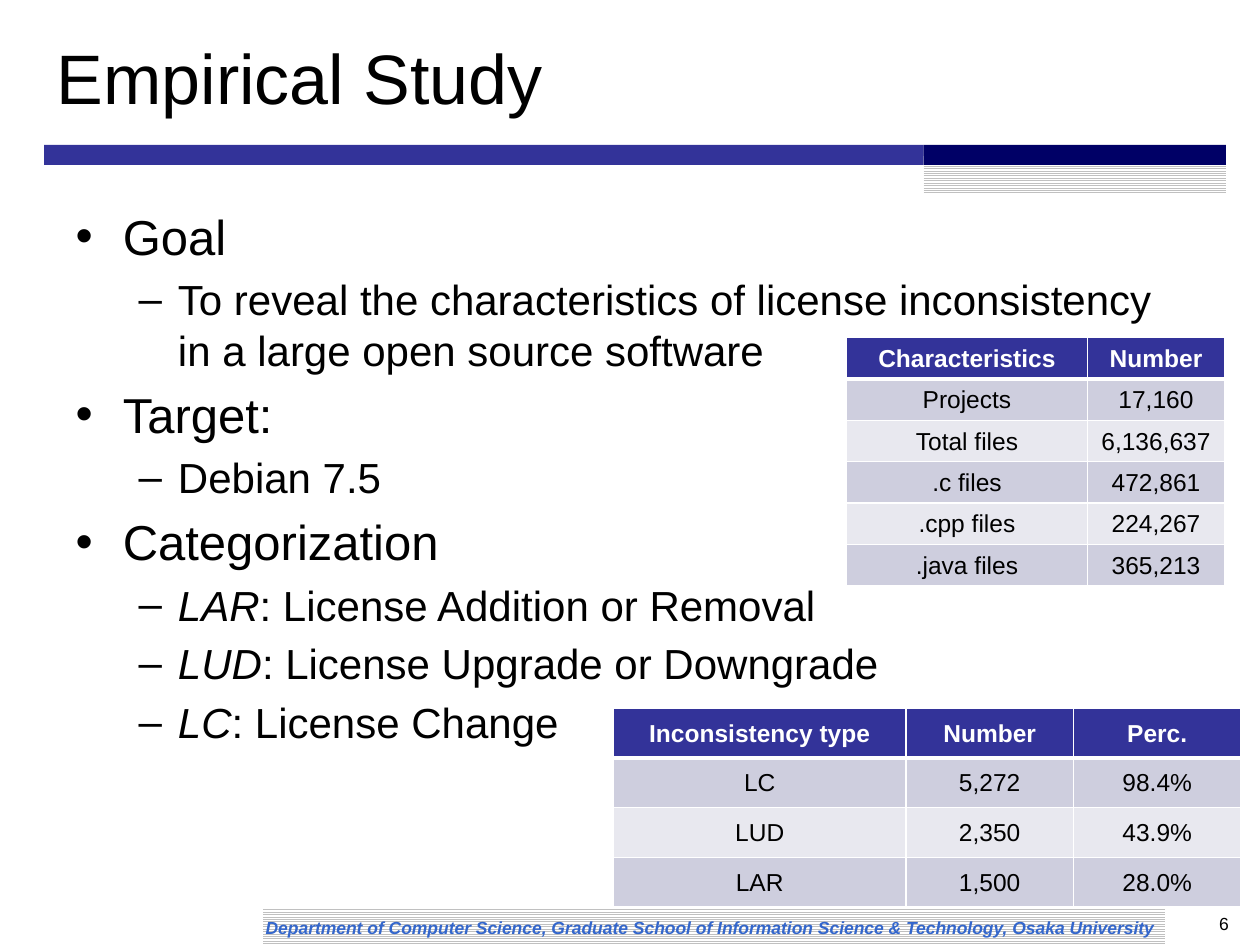
from pptx import Presentation
from pptx.util import Inches, Pt
from pptx.dml.color import RGBColor as Rgb
from pptx.enum.dml import MSO_PATTERN as Pat
from pptx.enum.shapes import MSO_SHAPE as Shape
from pptx.enum.text import MSO_ANCHOR as Anchor, MSO_AUTO_SIZE as Fit, PP_ALIGN as Align
from lxml.etree import SubElement as Sub
from pptx.oxml.ns import qn

COLS, ROWS = 100, 75
WIDE, HIGH = Inches(10), Inches(7.5)
BLACK = Rgb(0, 0, 0)
WHITE = Rgb(255, 255, 255)
BLUE = Rgb(0x33, 0x33, 0x99)
NAVY = Rgb(0, 0, 0x66)
SKY = Rgb(0x33, 0x66, 0xCC)
GRAY = Rgb(0xC0, 0xC0, 0xC0)
BANDS = [Rgb(0xE8, 0xE8, 0xEF), Rgb(0xCE, 0xCE, 0xDE)]

POINTS = [
    (0, [("Goal", False)]),
    (1, [("To reveal the characteristics of license inconsistency "
          "in a large open source software", False)]),
    (0, [("Target:", False)]),
    (1, [("Debian 7.5", False)]),
    (0, [("Categorization", False)]),
    (1, [("LAR", True), (": License Addition or Removal", False)]),
    (1, [("LUD", True), (": License Upgrade or Downgrade", False)]),
    (1, [("LC", True), (": License Change", False)]),
]
FILES = [
    ("Characteristics", "Number"),
    ("Projects", "17,160"),
    ("Total files", "6,136,637"),
    (".c files", "472,861"),
    (".cpp files", "224,267"),
    (".java files", "365,213"),
]
TYPES = [
    ("Inconsistency type", "Number", "Perc."),
    ("LC", "5,272", "98.4%"),
    ("LUD", "2,350", "43.9%"),
    ("LAR", "1,500", "28.0%"),
]


def grid(col, row, wide, high):
    return (round(col * WIDE / COLS), round(row * HIGH / ROWS),
            round(wide * WIDE / COLS), round(high * HIGH / ROWS))


def place(shape, box):
    shape.left, shape.top, shape.width, shape.height = grid(*box)


def add_run(para, text, size, color=BLACK, bold=False, italic=False):
    run = para.add_run()
    run.text = text
    font = run.font
    font.name, font.size = "Arial", Pt(size)
    font.bold, font.italic = bold, italic
    font.color.rgb = color


def add_bar(slide, box, color, lined=False):
    bar = slide.shapes.add_shape(Shape.RECTANGLE, *grid(*box))
    bar.shadow.inherit = False
    bar.line.fill.background()
    if lined:
        bar.fill.patterned()
        bar.fill.pattern = Pat.LIGHT_HORIZONTAL
        bar.fill.fore_color.rgb = color
        bar.fill.back_color.rgb = WHITE
    else:
        bar.fill.solid()
        bar.fill.fore_color.rgb = color


def add_note(slide, box, text, align, anchor, **style):
    frame = slide.shapes.add_textbox(*grid(*box)).text_frame
    frame.word_wrap = True
    frame.vertical_anchor = anchor
    para = frame.paragraphs[0]
    para.alignment = align
    add_run(para, text, 10, **style)


def set_title(slide, text):
    title = slide.shapes.title
    place(title, (3.5, 1.3, 93.8, 9.5))
    frame = title.text_frame
    frame.auto_size = Fit.NONE
    frame.vertical_anchor = Anchor.MIDDLE
    frame.paragraphs[0].alignment = Align.LEFT
    add_run(frame.paragraphs[0], text, 40)


def set_list(slide, points):
    body = slide.placeholders[1]
    place(body, (5, 15.5, 90, 52.8))
    frame = body.text_frame
    frame.auto_size = Fit.NONE
    frame.margin_top = Inches(0.09)
    for num, (level, runs) in enumerate(points):
        para = frame.add_paragraph() if num else frame.paragraphs[0]
        para.level = level
        if num == 0:
            para.space_before = Pt(0)
        for text, slant in runs:
            add_run(para, text, 24 if level else 28, italic=slant)


def add_edges(cell, top, base):
    props = cell._tc.get_or_add_tcPr()
    for side, width in (("L", 1), ("R", 1), ("T", top), ("B", base)):
        line = Sub(props, qn("a:ln" + side), w=str(Pt(width)))
        Sub(Sub(line, qn("a:solidFill")), qn("a:srgbClr"), val=str(WHITE))


def set_cell(cell, text, row):
    head = row == 0
    add_edges(cell, 3 if row == 1 else 1, 3 if head else 1)
    cell.fill.solid()
    cell.fill.fore_color.rgb = BLUE if head else BANDS[row % 2]
    cell.margin_left = cell.margin_right = cell.margin_top = Inches(0.01)
    cell.margin_bottom = 0
    cell.vertical_anchor = Anchor.MIDDLE
    para = cell.text_frame.paragraphs[0]
    para.alignment = Align.CENTER
    add_run(para, text, 14, WHITE if head else BLACK, bold=head)


def add_grid(slide, col, row, widths, high, data):
    box = grid(col, row, sum(widths), high)
    table = slide.shapes.add_table(len(data), len(widths), *box).table
    for item, width in zip(table.columns, widths):
        item.width = round(width * WIDE / COLS)
    for num, texts in enumerate(data):
        table.rows[num].height = box[3] // len(data)
        for place_no, text in enumerate(texts):
            set_cell(table.cell(num, place_no), text, num)


def main():
    deck = Presentation()
    deck.slide_width, deck.slide_height = WIDE, HIGH
    slide = deck.slides.add_slide(deck.slide_layouts[1])
    add_bar(slide, (20.9, 72, 71.6, 3), GRAY, lined=True)
    add_bar(slide, (3.5, 11.5, 69.8, 1.6), BLUE)
    add_bar(slide, (73.3, 12.4, 24, 3), GRAY, lined=True)
    add_bar(slide, (73.3, 11.5, 24, 1.6), NAVY)
    add_note(slide, (20.1, 72.3, 73.2, 2.7),
             "Department of Computer Science, Graduate School of Information "
             "Science & Technology, Osaka University",
             Align.LEFT, Anchor.MIDDLE, color=SKY, bold=True, italic=True)
    set_title(slide, "Empirical Study")
    set_list(slide, POINTS)
    add_note(slide, (92.5, 72, 6, 3), "6", Align.RIGHT, Anchor.TOP)
    add_grid(slide, 67.2, 26.8, (19.1, 10.9), 19.7, FILES)
    add_grid(slide, 48.7, 56.2, (23.2, 13.3, 13.3), 15.8, TYPES)
    deck.save("out.pptx")


if __name__ == "__main__":
    main()
